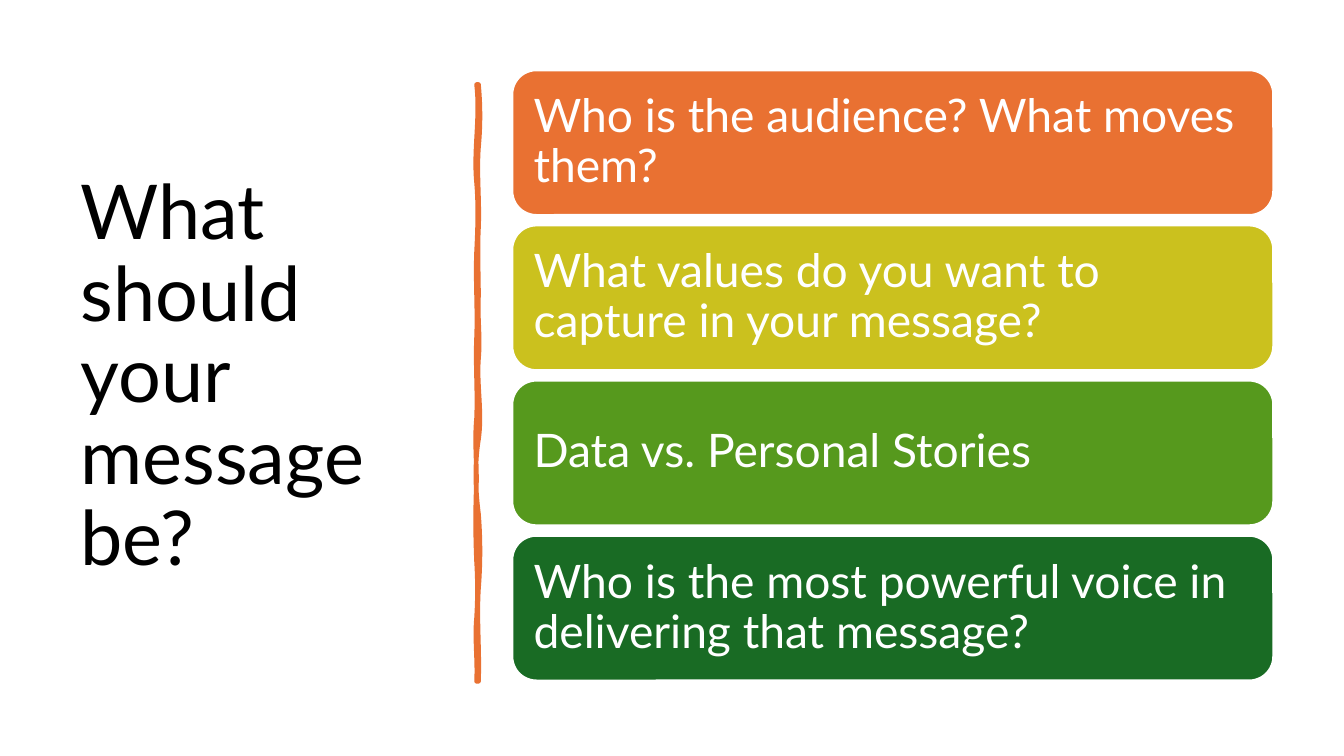
"""Build the slide that asks what your message should be."""
from typing import NamedTuple

from lxml import etree
from pptx import Presentation
from pptx.dml.color import RGBColor
from pptx.enum import shapes, text
from pptx.oxml import ns
from pptx.util import Cm, Pt

COLORS = {
    "black": "000000", "white": "FFFFFF", "orange": "E97132",
    "mustard": "CBC11E", "green": "56991D", "forest": "196B24",
}
FONT = "Lato"
BAR_LEFT, BAR_TOP, BAR_WIDTH, BAR_HEIGHT, BAR_PITCH = 12.91, 1.77, 19.18, 3.65, 3.91
DIVIDER_TOP, DIVIDER_BOTTOM = 2.13, 17.17
DIVIDER_RIGHT, DIVIDER_LEFT = 12.06, 12.01


class Bar(NamedTuple):
    question: str
    color: str


class Bend(NamedTuple):
    first: float
    second: float
    end: float


BARS = [
    Bar("Who is the audience? What moves them?", "orange"),
    Bar("What values do you want to capture in your message?", "mustard"),
    Bar("Data vs. Personal Stories", "green"),
    Bar("Who is the most powerful voice in delivering that message?", "forest"),
]

RIGHT_EDGE = [
    Bend(0.05, 0.05, 3.71), Bend(-0.05, 0.03, 5.74), Bend(-0.03, 0, 7.47),
    Bend(-0.03, 0.05, 9.04), Bend(-0.05, 0.1, 11.07), Bend(-0.1, -0.08, 12.95),
    Bend(0.05, 0.05, 14.83), Bend(-0.05, 0.03, DIVIDER_BOTTOM),
]
LEFT_EDGE = [
    Bend(0.03, -0.05, 15.57), Bend(0.03, 0.03, 14.15), Bend(-0.03, -0.03, 12.12),
    Bend(0, -0.05, 10.54), Bend(0.03, -0.03, 8.51), Bend(0.03, -0.03, 6.35),
    Bend(0.03, 0.05, 4.6), Bend(-0.08, 0.1, DIVIDER_TOP),
]


def rgb(name: str) -> RGBColor:
    """Return a named colour."""
    return RGBColor.from_string(COLORS[name])


def write(frame, words: str, size: float, color: str) -> None:
    """Put one left-aligned paragraph in the middle of a frame."""
    frame.word_wrap = True
    frame.auto_size = text.MSO_AUTO_SIZE.NONE
    frame.vertical_anchor = text.MSO_ANCHOR.MIDDLE
    frame.text = words
    para = frame.paragraphs[0]
    para.alignment = text.PP_ALIGN.LEFT
    para.line_spacing = 0.9
    para.font.name = FONT
    para.font.size = Pt(size)
    para.font.color.rgb = rgb(color)


def edge_points(x: float, start: float, bends: list[Bend]) -> list[tuple[int, int]]:
    """List two control points and an end point for each bend."""
    points = []
    for bend in bends:
        third = (bend.end - start) / 3
        points += [
            (Cm(x + bend.first), Cm(start + third)),
            (Cm(x + bend.second), Cm(start + 2 * third)),
            (Cm(x), Cm(bend.end)),
        ]
        start = bend.end
    return points


def curve_segments(shape, cap: int) -> None:
    """Turn each three line segments into a curve, keeping the cap straight."""
    lines = list(shape.element.iter(ns.qn("a:lnTo")))
    del lines[cap]
    for index in range(0, len(lines), 3):
        curve = etree.Element(ns.qn("a:cubicBezTo"))
        lines[index].addprevious(curve)
        for line in lines[index:index + 3]:
            curve.append(line[0])
            line.getparent().remove(line)


def draw_divider(page) -> None:
    """Draw the hand-drawn divider."""
    right = edge_points(DIVIDER_RIGHT, DIVIDER_TOP, RIGHT_EDGE)
    left = edge_points(DIVIDER_LEFT, DIVIDER_BOTTOM, LEFT_EDGE)
    builder = page.shapes.build_freeform(Cm(DIVIDER_RIGHT), Cm(DIVIDER_TOP))
    builder.add_line_segments(right + [(Cm(DIVIDER_LEFT), Cm(DIVIDER_BOTTOM))] + left)
    divider = builder.convert_to_shape()
    curve_segments(divider, len(right))
    divider.shadow.inherit = False
    divider.fill.solid()
    divider.fill.fore_color.rgb = rgb("orange")
    divider.line.color.rgb = rgb("orange")
    divider.line.width = Pt(3.25)


def draw_bar(page, bar: Bar, top: float) -> None:
    """Draw one rounded bar with its question."""
    box = page.shapes.add_shape(
        shapes.MSO_SHAPE.ROUNDED_RECTANGLE,
        Cm(BAR_LEFT), Cm(top), Cm(BAR_WIDTH), Cm(BAR_HEIGHT))
    box.shadow.inherit = False
    box.fill.solid()
    box.fill.fore_color.rgb = rgb(bar.color)
    box.line.color.rgb = rgb("white")
    box.line.width = Pt(1.5)
    frame = box.text_frame
    frame.margin_left = frame.margin_right = Cm(0.36)
    frame.margin_top = frame.margin_bottom = Cm(0.36)
    write(frame, bar.question, 33, "white")


def main() -> None:
    """Build and save the deck."""
    deck = Presentation()
    deck.slide_width, deck.slide_height = Cm(33.87), Cm(19.05)
    page = deck.slides.add_slide(deck.slide_layouts[5])
    title = page.shapes.title
    title.left, title.top, title.width, title.height = Cm(1.77), Cm(1.77), Cm(9.5), Cm(15.52)
    write(title.text_frame, "What should your message be?", 54, "black")
    draw_divider(page)
    for index, bar in enumerate(BARS):
        draw_bar(page, bar, BAR_TOP + index * BAR_PITCH)
    deck.save("out.pptx")


if __name__ == "__main__":
    main()
